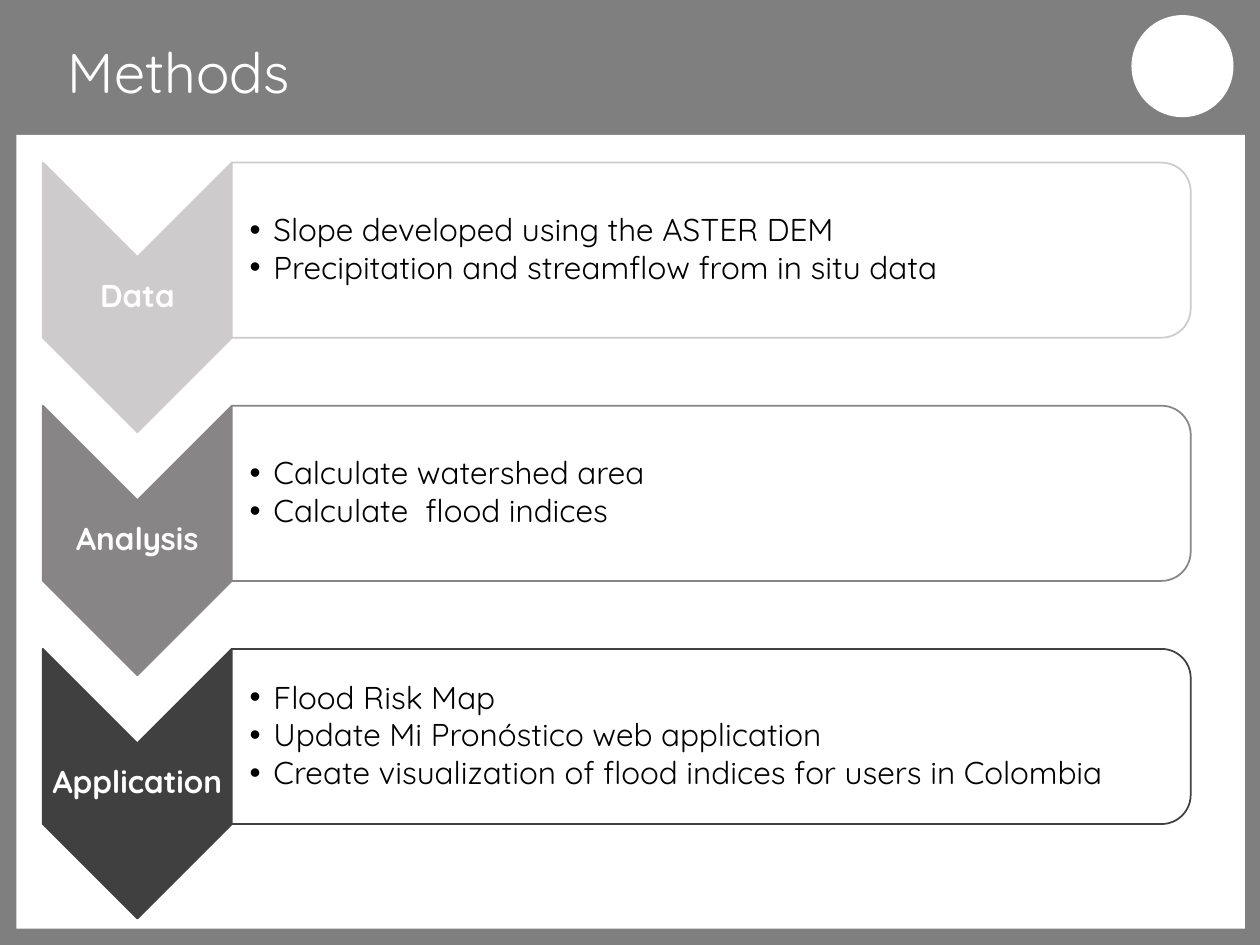
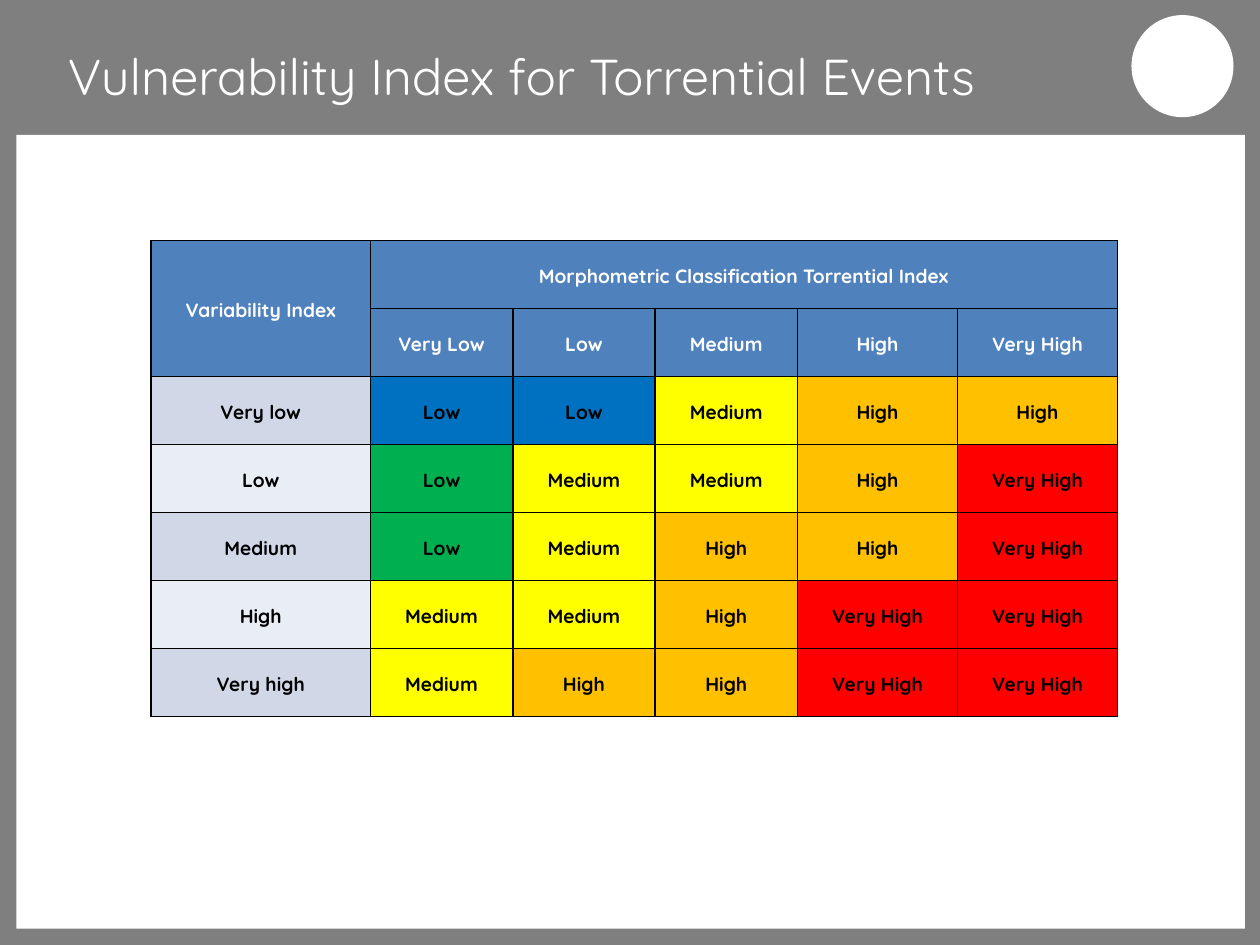
from pptx import Presentation
from pptx.dml.color import RGBColor
from pptx.enum.shapes import MSO_SHAPE
from pptx.enum.text import MSO_ANCHOR, PP_ALIGN
from pptx.oxml.ns import qn
from pptx.util import Inches, Pt
from lxml.etree import SubElement

WHITE, BLACK, GRAY = "FFFFFF", "000000", "807F7F"
HEADER_BLUE = "4F81BD"
ROW_BANDS = ["D0D8E8", "E9EDF4"]
RATING_FILLS = {"Lowest": "0070C0", "Low": "00B050", "Medium": "FFFF00",
                "High": "FFC000", "Very High": "FF0000"}

STAGES = [
    ("Data", "CDCBCB", ["Slope developed using the ASTER DEM",
                        "Precipitation and streamflow from in situ data"]),
    ("Analysis", "878585", ["Calculate watershed area", "Calculate  flood indices"]),
    ("Application", "404040", ["Flood Risk Map", "Update Mi Pronóstico web application",
                               "Create visualization of flood indices for users in Colombia"]),
]

MORPHOMETRIC_CLASSES = ["Very Low", "Low", "Medium", "High", "Very High"]
VULNERABILITY = [
    ("Very low", ["Low", "Low", "Medium", "High", "High"]),
    ("Low", ["Low", "Medium", "Medium", "High", "Very High"]),
    ("Medium", ["Low", "Medium", "High", "High", "Very High"]),
    ("High", ["Medium", "Medium", "High", "Very High", "Very High"]),
    ("Very high", ["Medium", "High", "High", "Very High", "Very High"]),
]


def color(value):
    return RGBColor.from_string(value)


class Deck:
    """Holds the shared style and the slide being built."""

    font_name = "Quicksand"

    def __init__(self):
        self.presentation = Presentation()
        self.presentation.slide_width = Inches(10)
        self.presentation.slide_height = Inches(7.5)
        self.slide = None

    def add_slide(self, title, title_size):
        self.slide = self.presentation.slides.add_slide(self.presentation.slide_layouts[6])
        self.shape(MSO_SHAPE.RECTANGLE, 0, 0, 10, 7.5, GRAY)
        self.shape(MSO_SHAPE.RECTANGLE, 0.13, 1.07, 9.75, 6.3, WHITE)
        self.shape(MSO_SHAPE.OVAL, 8.98, 0.12, 0.81, 0.81, WHITE)
        frame = self.text_box(0.44, 0.17, 7.81, 0.72, MSO_ANCHOR.BOTTOM)
        self.add_text(frame.paragraphs[0], title, title_size, WHITE)

    def shape(self, kind, left, top, width, height, fill, line=None, rotation=0):
        shape = self.slide.shapes.add_shape(
            kind, Inches(left), Inches(top), Inches(width), Inches(height))
        shape.shadow.inherit = False
        shape.rotation = rotation
        shape.fill.solid()
        shape.fill.fore_color.rgb = color(fill)
        if line:
            shape.line.color.rgb = color(line)
            shape.line.width = Pt(1)
        else:
            shape.line.fill.background()

    def turned_shape(self, kind, left, top, width, height, fill, line):
        """Draws a preset turned a quarter, placed by the area it covers."""
        shift = (width - height) / 2
        self.shape(kind, left + shift, top - shift, height, width, fill, line, 90)

    def text_box(self, left, top, width, height, anchor=MSO_ANCHOR.MIDDLE, margins=None):
        frame = self.slide.shapes.add_textbox(
            Inches(left), Inches(top), Inches(width), Inches(height)).text_frame
        frame.word_wrap = True
        frame.vertical_anchor = anchor
        if margins:
            (frame.margin_left, frame.margin_top,
             frame.margin_right, frame.margin_bottom) = map(Inches, margins)
        return frame

    def add_text(self, paragraph, text, size, ink, bold=False, align=None, spacing=0.9):
        paragraph.line_spacing = spacing
        paragraph.alignment = align
        run = paragraph.add_run()
        run.text = text
        run.font.name = self.font_name
        run.font.size = Pt(size)
        run.font.bold = bold
        run.font.color.rgb = color(ink)

    def label(self, text, left, top, width, height):
        frame = self.text_box(left, top, width, height, margins=[0.01] * 4)
        self.add_text(frame.paragraphs[0], text, 18, WHITE, True, PP_ALIGN.CENTER)

    def bullets(self, items, left, top, width, height):
        frame = self.text_box(left, top, width, height, margins=[0.14, 0.01, 0.01, 0.01])
        for index, item in enumerate(items):
            paragraph = frame.add_paragraph() if index else frame.paragraphs[0]
            properties = paragraph._p.get_or_add_pPr()
            properties.set("marL", str(Inches(0.19)))
            properties.set("indent", str(-Inches(0.19)))
            SubElement(properties, qn("a:buFont")).set("typeface", "Arial")
            SubElement(properties, qn("a:buChar")).set("char", "•")
            paragraph.space_after = Pt(2)
            self.add_text(paragraph, item, 18, BLACK)

    def table(self, left, top, widths, row_height, row_count):
        table = self.slide.shapes.add_table(
            row_count, len(widths), Inches(left), Inches(top),
            Inches(sum(widths)), Inches(row_height * row_count)).table
        table.first_row = table.horz_banding = False
        for column, width in zip(table.columns, widths):
            column.width = Inches(width)
        for row in table.rows:
            row.height = Inches(row_height)
        return table

    def cell(self, cell, text, fill, ink, tight=False):
        properties = cell._tc.get_or_add_tcPr()
        for side in ("a:lnL", "a:lnR", "a:lnT", "a:lnB"):
            border = SubElement(properties, qn(side), w=str(Pt(1)))
            SubElement(SubElement(border, qn("a:solidFill")), qn("a:srgbClr")).set("val", BLACK)
        cell.fill.solid()
        cell.fill.fore_color.rgb = color(fill)
        cell.vertical_anchor = MSO_ANCHOR.MIDDLE
        if tight:
            cell.margin_left = cell.margin_right = cell.margin_top = cell.margin_bottom = 0
        if text:
            self.add_text(cell.text_frame.paragraphs[0], text, 11, ink, True, PP_ALIGN.CENTER, 1.15)


def build_methods(deck):
    deck.add_slide("Methods", 32)
    for index, (name, tone, steps) in enumerate(STAGES):
        top = 1.29 + 1.93 * index
        deck.turned_shape(MSO_SHAPE.CHEVRON, 0.34, top, 1.5, 2.14, tone, tone)
        deck.label(name, 0.34, top + 0.75, 1.5, 0.64)
        deck.turned_shape(MSO_SHAPE.ROUND_2_SAME_RECTANGLE, 1.84, top, 7.61, 1.39, WHITE, tone)
        deck.bullets(steps, 1.84, top + 0.07, 7.55, 1.25)


def build_vulnerability(deck):
    deck.add_slide("Vulnerability Index for Torrential Events", 28.8)
    table = deck.table(1.2, 1.91, [1.74, 1.13, 1.13, 1.13, 1.27, 1.27], 0.54, 7)
    headers = [["Variability Index", "Morphometric Classification Torrential Index"] + [""] * 4,
               [""] + MORPHOMETRIC_CLASSES]
    for row, texts in enumerate(headers):
        for column, text in enumerate(texts):
            deck.cell(table.cell(row, column), text, HEADER_BLUE, WHITE, row == 1 and column > 1)
    table.cell(0, 0).merge(table.cell(1, 0))
    table.cell(0, 1).merge(table.cell(0, 5))
    for index, (variability, ratings) in enumerate(VULNERABILITY):
        row = index + 2
        deck.cell(table.cell(row, 0), variability, ROW_BANDS[index % 2], BLACK)
        for column, rating in enumerate(ratings, 1):
            level = "Lowest" if index == 0 and rating == "Low" else rating
            deck.cell(table.cell(row, column), rating, RATING_FILLS[level], BLACK, column > 1)


def main():
    deck = Deck()
    build_methods(deck)
    build_vulnerability(deck)
    deck.presentation.save("out.pptx")


if __name__ == "__main__":
    main()
